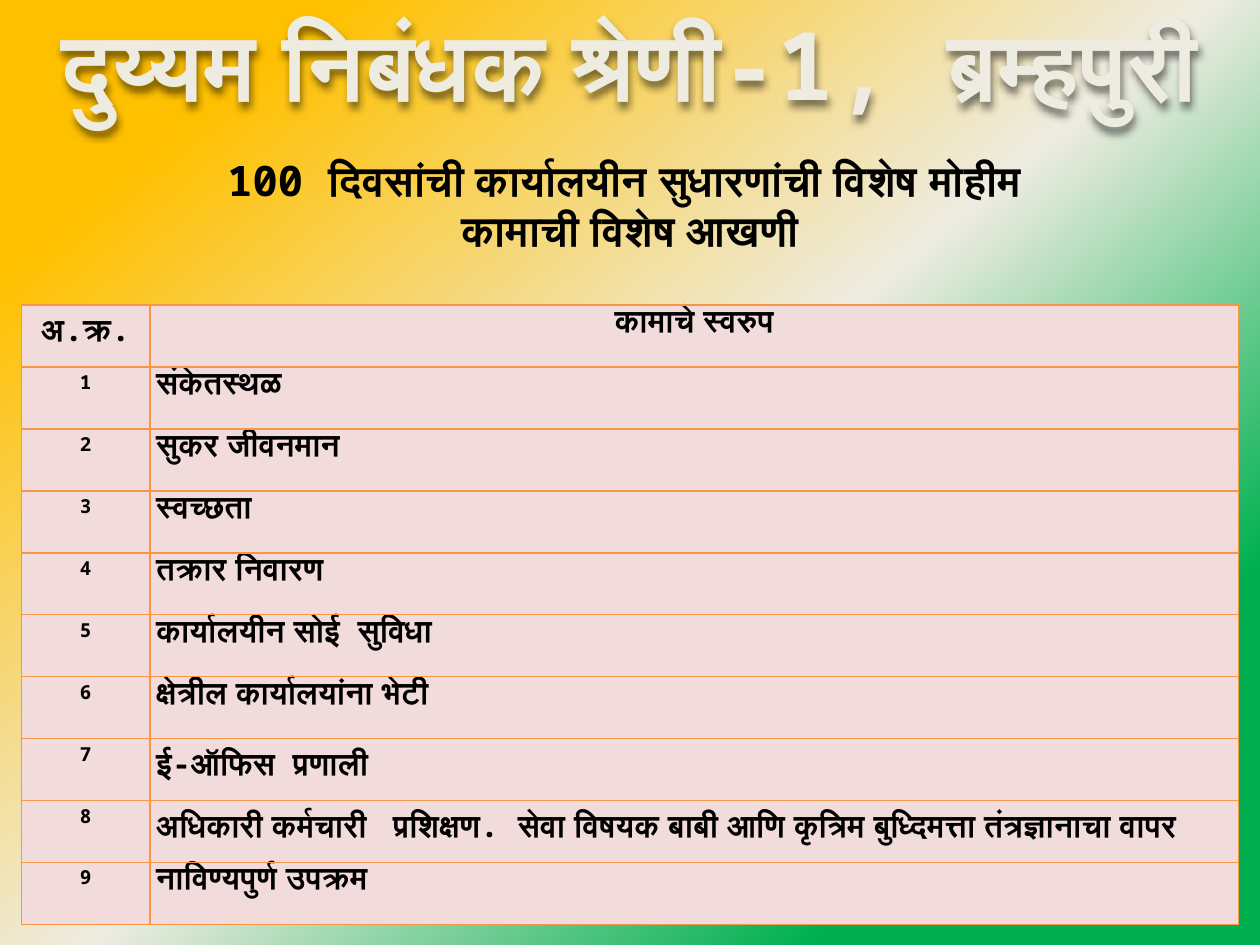
from copy import deepcopy
from dataclasses import dataclass

from lxml.etree import SubElement
from pptx import Presentation
from pptx.dml.color import RGBColor
from pptx.enum.text import MSO_ANCHOR, PP_ALIGN
from pptx.oxml import parse_xml
from pptx.oxml.ns import nsdecls, qn
from pptx.util import Inches, Pt


@dataclass(frozen=True)
class Theme:
    font: str = "Noto Sans Mono"
    ink: str = "000000"
    cell: str = "F2DCDB"
    border: str = "F79646"
    outline: str = "0070C0"
    stops: tuple = ((19, "00B050"), (49, "EEECE1"), (86, "FFC000"))
    title: int = 54
    subtitle: int = 24
    body: int = 18
    number: int = 11


THEME = Theme()
TITLE = "दुय्यम निबंधक श्रेणी-1, ब्रम्हपुरी"
SUBTITLE = ("100 दिवसांची कार्यालयीन सुधारणांची विशेष मोहीम ", "कामाची विशेष आखणी")
HEADER = ("अ.क्र.", "कामाचे स्वरुप")
TASKS = (
    "संकेतस्थळ",
    "सुकर जीवनमान",
    "स्वच्छता",
    "तक्रार निवारण",
    "कार्यालयीन सोई  सुविधा",
    "क्षेत्रील कार्यालयांना भेटी",
    "ई-ऑफिस  प्रणाली",
    "अधिकारी कर्मचारी   प्रशिक्षण. सेवा विषयक बाबी आणि कृत्रिम बुध्दिमत्ता तंत्रज्ञानाचा वापर",
    "नाविण्यपुर्ण उपक्रम",
)


def set_gradient(fill, owner, angle):
    """Give fill the theme's stops; owner is the element that holds it."""
    fill.gradient()
    fill.gradient_angle = 360 - angle
    stop_list = owner.find(".//" + qn("a:gsLst"))
    stop_list.append(deepcopy(stop_list[-1]))
    for stop, (position, color) in zip(fill.gradient_stops, THEME.stops):
        stop.position = position / 100
        stop.color.rgb = RGBColor.from_string(color)


def add_run(p, text, size, align=PP_ALIGN.CENTER):
    p.alignment = align
    r = p.add_run()
    r.text = text
    r.font.name, r.font.size, r.font.bold = THEME.font, Pt(size), True
    r.font.color.rgb = RGBColor.from_string(THEME.ink)
    return r


def add_text_box(slide, box, lines, size, anchor=MSO_ANCHOR.TOP):
    sp = slide.shapes.add_textbox(*box)
    tf = sp.text_frame
    tf.word_wrap = True
    tf.vertical_anchor = anchor
    for i, line in enumerate(lines):
        p = tf.add_paragraph() if i else tf.paragraphs[0]
        add_run(p, line, size)
    return sp


def add_title(slide, box):
    sp = add_text_box(slide, box, (TITLE,), THEME.title)
    r = sp.text_frame.paragraphs[0].runs[0]
    set_gradient(r.font.fill, r._r, 270)
    r._r.rPr.insert(0, parse_xml(
        f'<a:ln {nsdecls("a")} w="11430"><a:solidFill>'
        f'<a:srgbClr val="{THEME.outline}"/></a:solidFill></a:ln>'))
    sp._element.spPr.append(parse_xml(
        f'<a:effectLst {nsdecls("a")}><a:outerShdw blurRad="50800" dist="38100" '
        'dir="5400000"><a:srgbClr val="000000"><a:alpha val="50000"/></a:srgbClr>'
        '</a:outerShdw></a:effectLst>'))


def style_cell(cell):
    cell.margin_left = cell.margin_right = Inches(0.05)
    cell.margin_top = cell.margin_bottom = 0
    tc_pr = cell._tc.get_or_add_tcPr()
    for side in ("a:lnL", "a:lnR", "a:lnT", "a:lnB"):
        ln = SubElement(tc_pr, qn(side), w=str(Pt(1)))
        SubElement(SubElement(ln, qn("a:solidFill")), qn("a:srgbClr"), val=THEME.border)
    cell.fill.solid()
    cell.fill.fore_color.rgb = RGBColor.from_string(THEME.cell)


def add_task_table(slide, box):
    rows = [HEADER] + [(str(n), task) for n, task in enumerate(TASKS, 1)]
    width, height = box[2:]
    table = slide.shapes.add_table(len(rows), len(HEADER), *box).table
    table.first_row = table.horz_banding = False
    table.columns[0].width = Inches(1.02)
    table.columns[1].width = width - Inches(1.02)
    for i, row in enumerate(rows):
        table.rows[i].height = height // len(rows)
        for j, text in enumerate(row):
            cell = table.cell(i, j)
            style_cell(cell)
            p = cell.text_frame.paragraphs[0]
            p.line_spacing = 1.07
            size = THEME.number if i and j == 0 else THEME.body
            align = PP_ALIGN.LEFT if i and j else PP_ALIGN.CENTER
            add_run(p, text, size, align)


def main():
    prs = Presentation()
    prs.slide_width, prs.slide_height = Inches(10), Inches(7.5)
    slide = prs.slides.add_slide(prs.slide_layouts[6])
    set_gradient(slide.background.fill, slide.element, 230)
    width, margin = prs.slide_width, Inches(0.17)
    add_text_box(slide, (0, Inches(1.17), width, Inches(0.91)),
                 SUBTITLE, THEME.subtitle, MSO_ANCHOR.MIDDLE)
    add_task_table(slide, (margin, Inches(2.42), width - 2 * margin, Inches(4.92)))
    add_title(slide, (0, 0, width, Inches(1.01)))
    prs.save("out.pptx")


if __name__ == "__main__":
    main()
